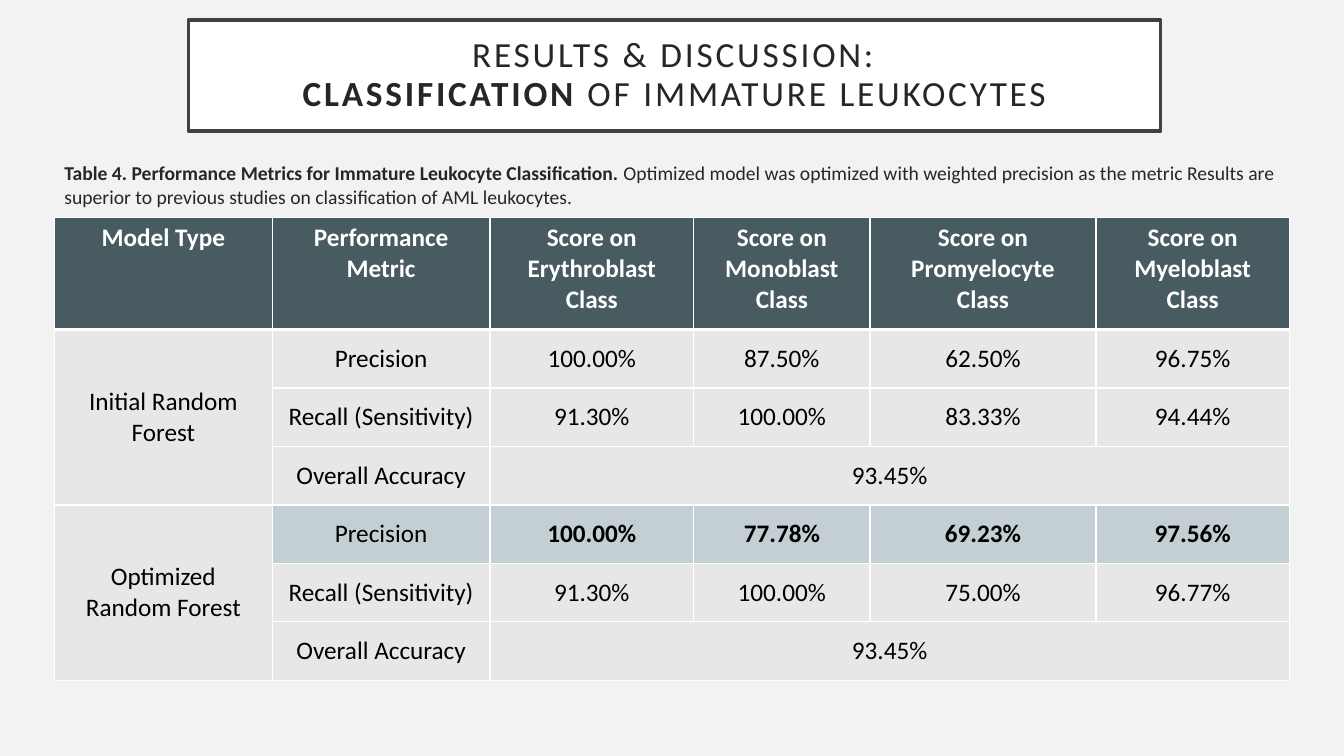
"""Build the slide with the immature leukocyte classification results."""
from lxml.etree import SubElement
from pptx import Presentation
from pptx.dml.color import RGBColor
from pptx.enum.text import MSO_ANCHOR as ANCHOR, MSO_AUTO_SIZE as AUTO, PP_ALIGN as ALIGN
from pptx.oxml.ns import qn
from pptx.util import Inches, Pt

BACKGROUND = RGBColor(0xF2, 0xF2, 0xF2)
WHITE = RGBColor(0xFF, 0xFF, 0xFF)
BLACK = RGBColor(0x00, 0x00, 0x00)
FRAME = RGBColor(0x40, 0x40, 0x40)
INK = RGBColor(0x26, 0x26, 0x26)
HEADER = RGBColor(0x47, 0x5B, 0x61)
PLAIN = RGBColor(0xE7, 0xE7, 0xE7)
HIGHLIGHT = RGBColor(0xC3, 0xCF, 0xD3)


def add_run(p, text, size, color, bold=False):
    r = p.add_run()
    r.text = text
    for name, value in {"name": "Calibri", "size": Pt(size), "bold": bold}.items():
        setattr(r.font, name, value)
    r.font.color.rgb = color
    return r


def add_border(cell, side, width):
    line = SubElement(cell._tc.get_or_add_tcPr(), qn(f"a:ln{side}"), w=str(Pt(width)))
    fill = SubElement(line, qn("a:solidFill"))
    SubElement(fill, qn("a:srgbClr"), val=str(WHITE))


prs = Presentation()
prs.slide_width, prs.slide_height = Inches(13.33), Inches(7.5)
s = prs.slides.add_slide(prs.slide_layouts[5])
s.background.fill.solid()
s.background.fill.fore_color.rgb = BACKGROUND

title = s.shapes.title
box = {"left": 1.87, "top": 0.2, "width": 9.64, "height": 1.1}
for name, value in box.items():
    setattr(title, name, Inches(value))
title.fill.solid()
title.fill.fore_color.rgb = WHITE
title.line.color.rgb = FRAME
title.line.width = Pt(2.5)
tf = title.text_frame
tf.word_wrap, tf.auto_size, tf.vertical_anchor = True, AUTO.NONE, ANCHOR.MIDDLE
for side in ("left", "top", "right", "bottom"):
    setattr(tf, f"margin_{side}", Inches(0.2))
p = tf.paragraphs[0]
p.alignment, p.line_spacing = ALIGN.CENTER, 0.9
title_runs = [
    ("RESULTS & DISCUSSION:", False),
    ("CLASSIFICATION", True),
    (" OF IMMATURE LEUKOCYTES", False),
]
for text, bold in title_runs:
    if bold:
        p.add_line_break()
    r = add_run(p, text, 25.2, INK, bold)
    r.font._element.set("spc", "200")

caption = s.shapes.add_textbox(Inches(0.54), Inches(1.55), Inches(12.31), Inches(0.6))
tf = caption.text_frame
tf.word_wrap = True
p = tf.paragraphs[0]
add_run(p, "Table 4. Performance Metrics for Immature Leukocyte Classification. ", 14, INK, True)
add_run(p, "Optimized model was optimized with weighted precision as the metric Results are "
           "superior to previous studies on classification of AML leukocytes.", 14, INK)

rows = [
    ["Model Type", "Performance Metric", "Score on Erythroblast\nClass",
     "Score on Monoblast\nClass", "Score on Promyelocyte\nClass",
     "Score on\nMyeloblast\nClass"],
    ["Initial Random Forest", "Precision", "100.00%", "87.50%", "62.50%", "96.75%"],
    ["", "Recall (Sensitivity)", "91.30%", "100.00%", "83.33%", "94.44%"],
    ["", "Overall Accuracy", "93.45%", "", "", ""],
    ["Optimized\nRandom Forest", "Precision", "100.00%", "77.78%", "69.23%", "97.56%"],
    ["", "Recall (Sensitivity)", "91.30%", "100.00%", "75.00%", "96.77%"],
    ["", "Overall Accuracy", "93.45%", "", "", ""],
]
col_widths = [2.16, 2.16, 2.02, 1.75, 2.24, 1.92]
row_heights = [1.11] + [0.58] * 6
best_row = 4

table = s.shapes.add_table(len(rows), len(col_widths), Inches(0.54), Inches(2.16),
                           Inches(sum(col_widths)), Inches(sum(row_heights))).table
table.horz_banding = False
for col, width in zip(table.columns, col_widths):
    col.width = Inches(width)
for row, height in zip(table.rows, row_heights):
    row.height = Inches(height)

for i, texts in enumerate(rows):
    for j, text in enumerate(texts):
        cell = table.cell(i, j)
        header, best = i == 0, i == best_row and j > 0
        cell.vertical_anchor = ANCHOR.TOP if header else ANCHOR.MIDDLE
        for side in "LRTB":
            thick = (i, side) in ((0, "B"), (1, "T"))
            add_border(cell, side, 3 if thick else 1)
        cell.fill.solid()
        cell.fill.fore_color.rgb = HEADER if header else HIGHLIGHT if best else PLAIN
        if not text:
            continue
        tf = cell.text_frame
        for k, line in enumerate(text.split("\n")):
            p = tf.add_paragraph() if k else tf.paragraphs[0]
            p.alignment = ALIGN.CENTER
            add_run(p, line, 18, WHITE if header else BLACK, header or best and j > 1)

for first in (1, 4):
    table.cell(first, 0).merge(table.cell(first + 2, 0))
    table.cell(first + 2, 2).merge(table.cell(first + 2, 5))

prs.save("out.pptx")
